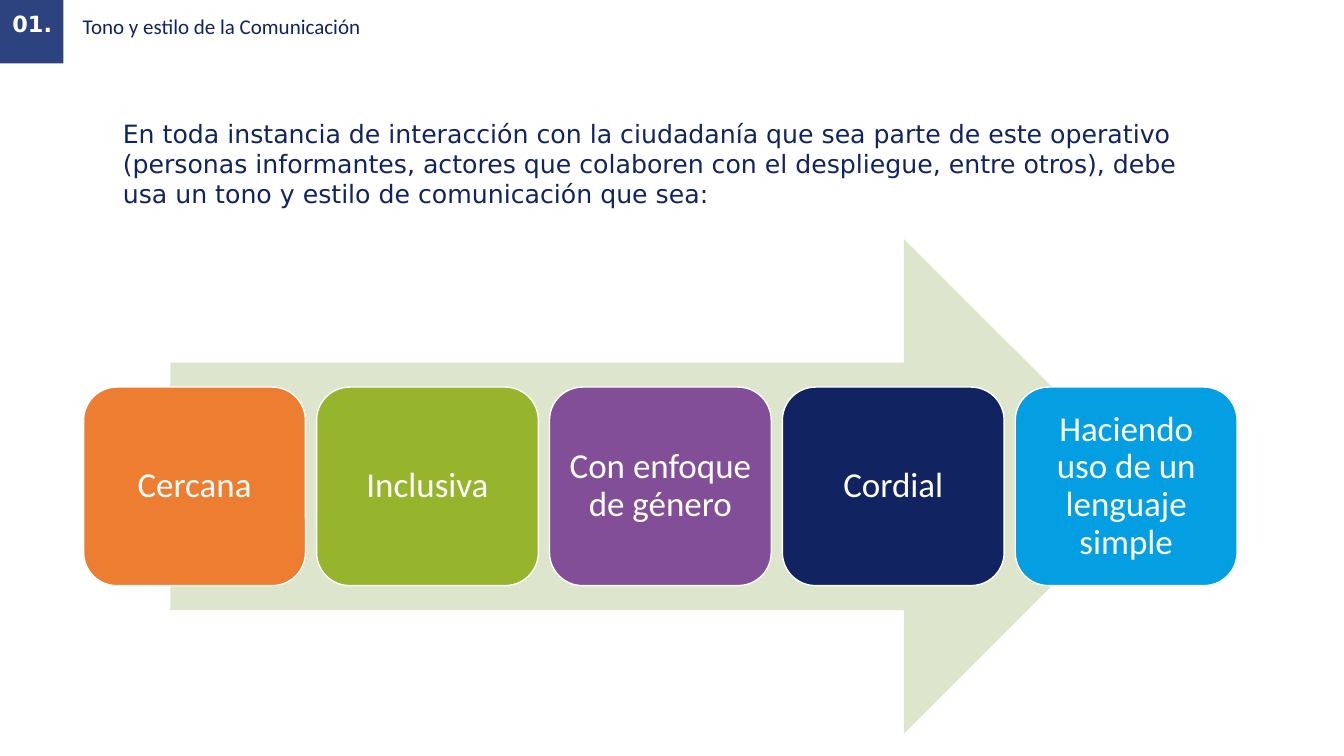
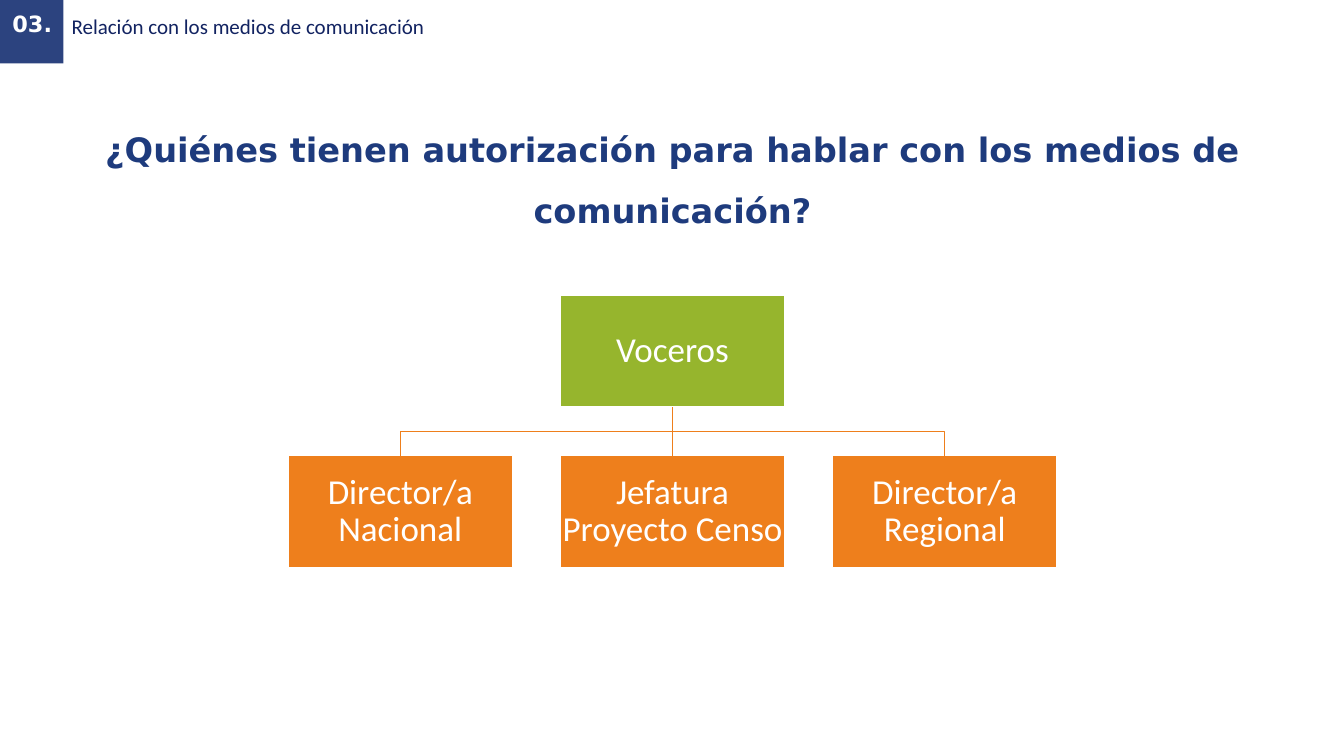
from dataclasses import dataclass

from lxml import etree
from pptx import Presentation
from pptx.dml.color import RGBColor
from pptx.enum import shapes, text
from pptx.oxml import ns
from pptx.util import Inches, Pt


@dataclass(frozen=True)
class Theme:
    tab: str = "2C437F"
    navy: str = "122361"
    blue: str = "1E3B7D"
    white: str = "FFFFFF"
    pale_green: str = "DDE5CD"
    green: str = "96B52D"
    coral: str = "ED7D31"
    orange: str = "EE7F1C"
    purple: str = "824E98"
    sky: str = "049EE2"
    sans: str = "Calibri"
    wide: str = "DejaVu Sans"
    section_size: int = 15
    number_size: int = 16
    body_size: int = 18
    question_size: int = 24
    label_size: int = 25


THEME = Theme()

TONE = {
    "number": "01.",
    "section": "Tono y estilo de la Comunicación",
    "intro": "En toda instancia de interacción con la ciudadanía que sea parte de este "
             "operativo (personas informantes, actores que colaboren con el despliegue, "
             "entre otros), debe usa un tono y estilo de comunicación que sea:",
    "qualities": [
        ("Cercana", THEME.coral),
        ("Inclusiva", THEME.green),
        ("Con enfoque de género", THEME.purple),
        ("Cordial", THEME.navy),
        ("Haciendo uso de un lenguaje simple", THEME.sky),
    ],
}

MEDIA = {
    "number": "03.",
    "section": "Relación con los medios de comunicación",
    "question": "¿Quiénes tienen autorización para hablar con los medios de comunicación?",
    "head": "Voceros",
    "spokespeople": ["Director/a Nacional", "Jefatura Proyecto Censo", "Director/a Regional"],
}


def write(shape, words, size, color, font=THEME.sans, bold=False, centred=True,
          spacing=0.9, middle=True, insets=(0.1, 0.05, 0.1, 0.05)):
    frame = shape.text_frame
    frame.word_wrap = True
    frame.vertical_anchor = text.MSO_ANCHOR.MIDDLE if middle else text.MSO_ANCHOR.TOP
    (frame.margin_left, frame.margin_top,
     frame.margin_right, frame.margin_bottom) = map(Inches, insets)
    para = frame.paragraphs[0]
    para.alignment = text.PP_ALIGN.CENTER if centred else text.PP_ALIGN.LEFT
    para.line_spacing = spacing
    span = para.add_run()
    span.text = words
    span.font.size = Pt(size)
    span.font.name = font
    span.font.bold = bold
    span.font.color.rgb = RGBColor.from_string(color)


def add_text(page, place, words, size, color, **style):
    box = page.shapes.add_textbox(*map(Inches, place))
    write(box, words, size, color, **style)


def add_block(page, kind, place, fill, outline=None):
    block = page.shapes.add_shape(kind, *map(Inches, place))
    block.shadow.inherit = False
    block.fill.solid()
    block.fill.fore_color.rgb = RGBColor.from_string(fill)
    if outline:
        block.line.color.rgb = RGBColor.from_string(outline)
        block.line.width = Pt(1)
    else:
        block.line.fill.background()
    return block


def add_label_block(page, kind, place, fill, words, inset):
    block = add_block(page, kind, place, fill, THEME.white)
    write(block, words, THEME.label_size, THEME.white, insets=(inset,) * 4)
    return block


def add_branch(page, above, below):
    """Join two blocks, with an elbow unless one is right under the other."""
    start_x, end_x = (block.left + block.width // 2 for block in (above, below))
    start_y, end_y = above.top + above.height, below.top
    run, drop = end_x - start_x, end_y - start_y
    kind = shapes.MSO_CONNECTOR.ELBOW if run else shapes.MSO_CONNECTOR.STRAIGHT
    branch = page.shapes.add_connector(kind, start_x, start_y, end_x, end_y)
    branch.line.color.rgb = RGBColor.from_string(THEME.orange)
    branch.line.width = Pt(1)
    etree.SubElement(branch._element.spPr, ns.qn("a:effectLst"))
    branch.begin_connect(above, 2)
    branch.end_connect(below, 0)
    if run:
        # A quarter turn makes the elbow leave downwards instead of sideways.
        branch.left = (start_x + end_x - drop) // 2
        branch.top = (start_y + end_y - abs(run)) // 2
        branch.width, branch.height = drop, abs(run)
        frame = branch._element.spPr.find(ns.qn("a:xfrm"))
        frame.set("rot", "16200000" if run > 0 else "5400000")
        frame.set("flipH", "1" if run > 0 else "0")


def add_page(deck, content, section_left):
    page = deck.slides.add_slide(deck.slide_layouts[6])
    for place, fill in (((0, 0, 0.64, 0.63), THEME.tab),
                        ((0.63, 0, 0.1, 1.12), THEME.white)):
        add_block(page, shapes.MSO_SHAPE.RECTANGLE, place, fill)
    add_text(page, (section_left, 0.01, 11.91, 0.54), content["section"],
             THEME.section_size, THEME.navy, centred=False, insets=(0, 0.05, 0.1, 0.05))
    add_text(page, (0, 0.06, 0.64, 0.38), content["number"],
             THEME.number_size, THEME.white, font=THEME.wide, bold=True)
    return page


def build_tone(deck):
    page = add_page(deck, TONE, 0.82)
    add_text(page, (1.12, 1.12, 10.7, 1.01), TONE["intro"], THEME.body_size, THEME.navy,
             font=THEME.wide, centred=False, spacing=1, middle=False)
    add_block(page, shapes.MSO_SHAPE.RIGHT_ARROW, (1.69, 2.37, 9.73, 4.91),
              THEME.pale_green)
    left, top, width, height, gap = 0.83, 3.84, 2.2, 1.97, 0.11
    for index, (quality, fill) in enumerate(TONE["qualities"]):
        place = (left + index * (width + gap), top, width, height)
        add_label_block(page, shapes.MSO_SHAPE.ROUNDED_RECTANGLE, place, fill, quality, 0.1)


def build_media(deck):
    page = add_page(deck, MEDIA, 0.71)
    add_text(page, (0.99, 1.04, 11.36, 1.68), MEDIA["question"], THEME.question_size,
             THEME.blue, font=THEME.wide, bold=True, spacing=1.5, middle=False,
             insets=(0, 0.04, 0, 0.04))

    width, height, pitch, centre = 2.23, 1.11, 2.7, 6.67
    head_top, row_top = 2.93, 4.52
    middle = (len(MEDIA["spokespeople"]) - 1) / 2

    def add_role(role, x, top, fill):
        return add_label_block(page, shapes.MSO_SHAPE.RECTANGLE,
                               (x - width / 2, top, width, height), fill, role, 0.02)

    head = add_role(MEDIA["head"], centre, head_top, THEME.green)
    for index, role in enumerate(MEDIA["spokespeople"]):
        x = centre + (index - middle) * pitch
        add_branch(page, head, add_role(role, x, row_top, THEME.orange))


def main():
    deck = Presentation()
    deck.slide_width, deck.slide_height = Inches(13.33), Inches(7.5)
    build_tone(deck)
    build_media(deck)
    deck.save("out.pptx")


if __name__ == "__main__":
    main()
